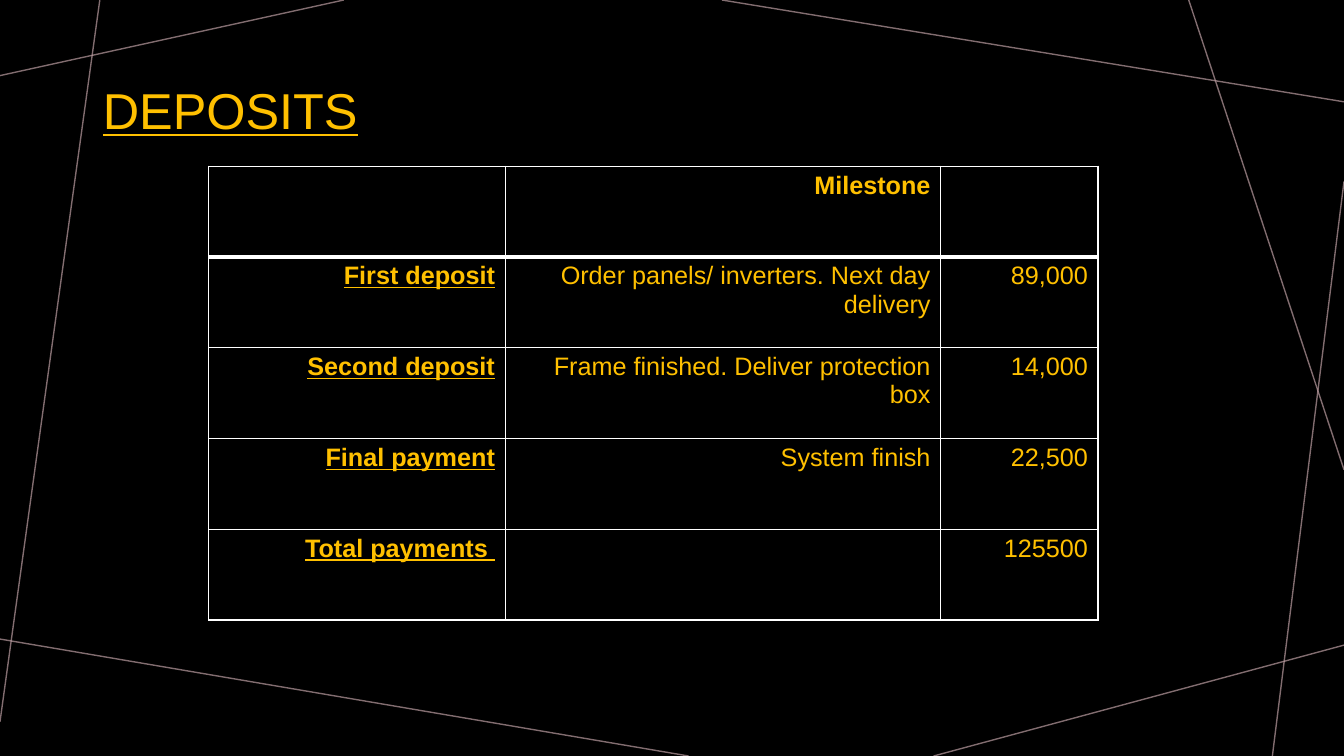
from pptx import Presentation
from pptx.dml.color import RGBColor
from pptx.enum.shapes import MSO_CONNECTOR
from pptx.enum.text import MSO_ANCHOR, PP_ALIGN
from pptx.oxml.ns import qn
from pptx.util import Inches, Pt
from lxml.etree import SubElement

BLACK = RGBColor(0x00, 0x00, 0x00)
WHITE = RGBColor(0xFF, 0xFF, 0xFF)
GOLD = RGBColor(0xFF, 0xC0, 0x00)
MAUVE = RGBColor(0xBA, 0x9C, 0xA0)

RAYS = [
    (3.41, 0, 0, 0.75),
    (0.99, 0, 0, 7.16),
    (6.83, 7.5, 0, 6.34),
    (13.33, 6.4, 9.26, 7.5),
    (13.33, 1.8, 12.62, 7.5),
    (13.33, 4.66, 11.79, 0),
    (13.33, 1.01, 7.16, 0),
]
DEPOSITS = [
    ("", "Milestone", ""),
    ("First deposit", "Order panels/ inverters. Next day delivery", "89,000"),
    ("Second deposit", "Frame finished. Deliver protection box", "14,000"),
    ("Final payment", "System finish", "22,500"),
    ("Total payments ", "", "125500"),
]
COLUMN_WIDTHS = [2.94, 4.32, 1.56]


def write_text(frame, text, size=18, color=GOLD, bold=False, underline=False,
               align=PP_ALIGN.LEFT, anchor=MSO_ANCHOR.TOP, line_spacing=None):
    frame.word_wrap = True
    frame.vertical_anchor = anchor
    paragraph = frame.paragraphs[0]
    paragraph.alignment = align
    paragraph.line_spacing = line_spacing
    run = paragraph.add_run()
    run.text = text
    run.font.name = "Arial"
    run.font.size = Pt(size)
    run.font.color.rgb = color
    run.font.bold = bold
    run.font.underline = underline


def draw_rays(slide, left, top):
    for x1, y1, x2, y2 in RAYS:
        ray = slide.shapes.add_connector(
            MSO_CONNECTOR.STRAIGHT, Inches(left + x1), Inches(top + y1),
            Inches(left + x2), Inches(top + y2))
        ray.line.color.rgb = MAUVE
        ray.line.width = Pt(1)
        properties = ray._element.spPr
        color = properties.find(".//" + qn("a:srgbClr"))
        SubElement(color, qn("a:alpha"), val="70000")
        SubElement(properties, qn("a:effectLst"))


def place_title(slide, left, top, width, height):
    title = slide.shapes.title
    title.left, title.top = Inches(left), Inches(top)
    title.width, title.height = Inches(width), Inches(height)
    write_text(title.text_frame, "DEPOSITS", size=36, underline=True,
               anchor=MSO_ANCHOR.MIDDLE, line_spacing=0.9)


def set_borders(cell, top, bottom):
    properties = cell._tc.get_or_add_tcPr()
    for side, points in (("L", 1), ("R", 1), ("T", top), ("B", bottom)):
        border = SubElement(properties, qn(f"a:ln{side}"), w=str(Pt(points)))
        fill = SubElement(border, qn("a:solidFill"))
        SubElement(fill, qn("a:srgbClr"), val=str(WHITE))


def place_deposits(slide, left, top, width, height):
    table = slide.shapes.add_table(
        len(DEPOSITS), len(COLUMN_WIDTHS), Inches(left), Inches(top),
        Inches(width), Inches(height)).table
    table.first_row = False
    table.horz_banding = False
    for column, share in zip(table.columns, COLUMN_WIDTHS):
        column.width = Inches(width * share / sum(COLUMN_WIDTHS))
    for row, entries in enumerate(DEPOSITS):
        for column, entry in enumerate(entries):
            cell = table.cell(row, column)
            set_borders(cell, top=3 if row == 1 else 1,
                        bottom=3 if row == 0 else 1)
            cell.fill.solid()
            cell.fill.fore_color.rgb = BLACK
            if entry:
                write_text(cell.text_frame, entry, align=PP_ALIGN.RIGHT,
                           bold=row == 0 or column == 0,
                           underline=column == 0)


def main():
    deck = Presentation()
    deck.slide_width, deck.slide_height = Inches(13.33), Inches(7.5)
    slide = deck.slides.add_slide(deck.slide_layouts[5])
    slide.background.fill.solid()
    slide.background.fill.fore_color.rgb = BLACK
    draw_rays(slide, 0, 0)
    place_title(slide, 0.92, 0.4, 11.5, 1.45)
    place_deposits(slide, 2.07, 1.65, 8.82, 4.5)
    deck.save("out.pptx")


if __name__ == "__main__":
    main()
